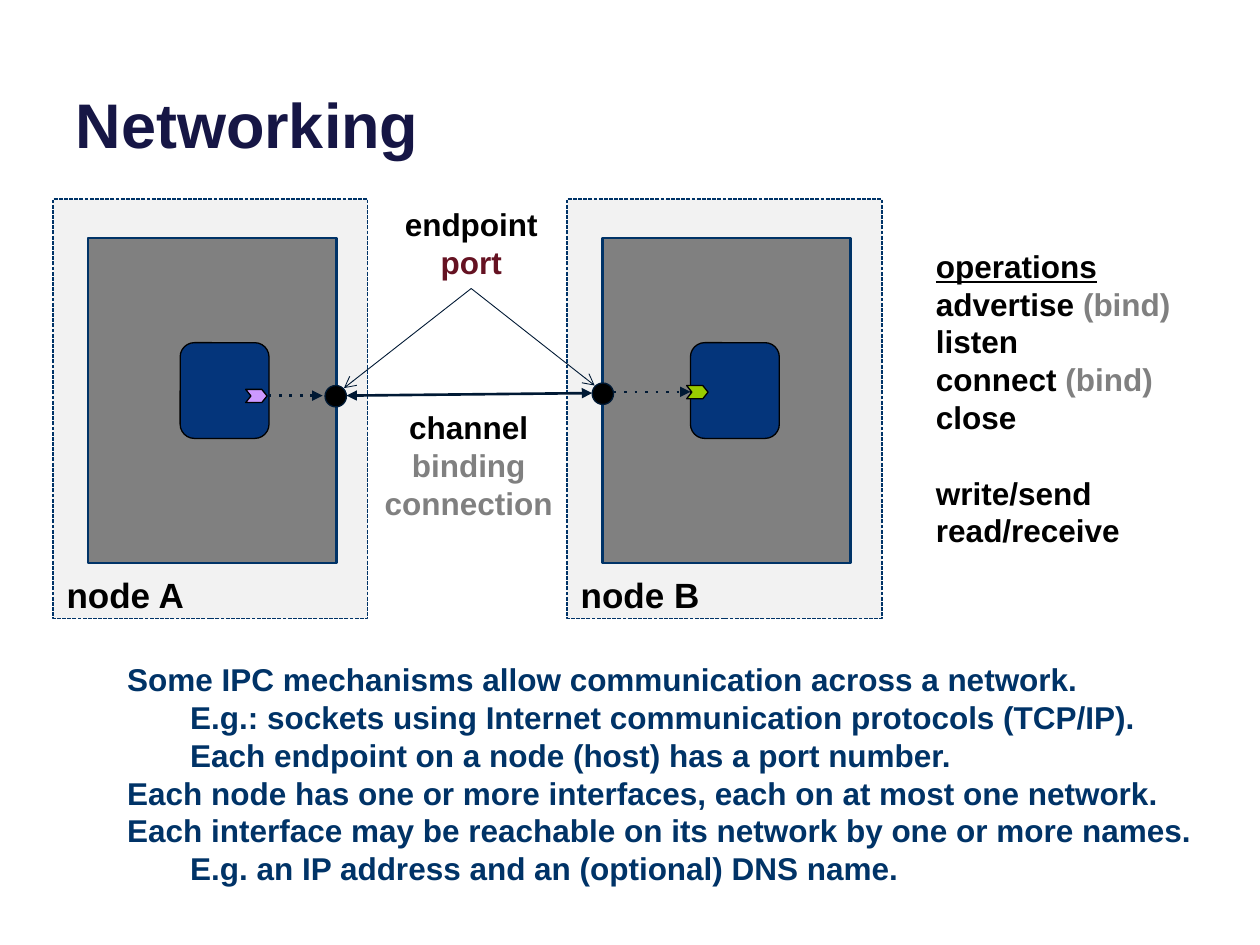
"""Build the Networking slide: two nodes joined by a channel, with notes on IPC."""
from lxml import etree
from pptx import Presentation
from pptx.dml.color import RGBColor
from pptx.enum.dml import MSO_LINE
from pptx.enum.shapes import MSO_CONNECTOR, MSO_SHAPE
from pptx.enum.text import MSO_ANCHOR, MSO_AUTO_SIZE, PP_ALIGN
from pptx.oxml.ns import qn
from pptx.util import Inches, Pt

RECT, ROUNDED = MSO_SHAPE.RECTANGLE, MSO_SHAPE.ROUNDED_RECTANGLE
OVAL, CHEVRON = MSO_SHAPE.OVAL, MSO_SHAPE.CHEVRON
STRAIGHT, DASHED = MSO_CONNECTOR.STRAIGHT, MSO_LINE.SQUARE_DOT
LEFT, CENTER = PP_ALIGN.LEFT, PP_ALIGN.CENTER
TOP, BOTTOM, NO_FIT = MSO_ANCHOR.TOP, MSO_ANCHOR.BOTTOM, MSO_AUTO_SIZE.NONE
BLACK, GRAY, NAVY, INK = "000000", "808080", "003367", "001934"

prs = Presentation()
prs.slide_width, prs.slide_height = Inches(10), Inches(7.5)
COL, ROW = prs.slide_width / 100, prs.slide_height / 75
s = prs.slides.add_slide(prs.slide_layouts[1])


def add_box(kind, x, y, w, h, fill, line, width):
    """Add a filled, outlined shape placed in grid columns and rows."""
    sp = s.shapes.add_shape(kind, int(x * COL), int(y * ROW), int(w * COL), int(h * ROW))
    sp.shadow.inherit = False
    sp.fill.solid()
    sp.fill.fore_color.rgb = RGBColor.from_string(fill)
    sp.line.color.rgb = RGBColor.from_string(line)
    sp.line.width = Pt(width)
    return sp


def write(sp, at, lines, size=18, align=LEFT, anchor=TOP, wrap=True):
    """Place a text holder and fill it with paragraphs of (text, colour) runs."""
    x, y, w, h = at
    sp.left, sp.top, sp.width, sp.height = int(x * COL), int(y * ROW), int(w * COL), int(h * ROW)
    tf = sp.text_frame
    tf.word_wrap, tf.auto_size, tf.vertical_anchor = wrap, NO_FIT, anchor
    for i, runs in enumerate(lines):
        p = tf.paragraphs[0] if i == 0 else tf.add_paragraph()
        p.alignment, p.space_before, p.line_spacing = align, Pt(0), Pt(size * 1.2)
        for text, color in runs:
            r = p.add_run()
            r.text = text
            r.font.name, r.font.size, r.font.bold = "Arial", Pt(size), True
            r.font.color.rgb = RGBColor.from_string(color)
    return tf


write(s.shapes.title, (5, -3.7, 90, 17), [[("Networking", "161645")]], 36, anchor=BOTTOM)

nodes = [("node A", 4.2, 14.3, 19.5, 30.9, "CC99FF", 25.8, 30.6),
         ("node B", 45, 54.8, 54.5, 30.6, "99CC00", 47, 30.4)]
for name, x, process_x, slot_x, slot_y, slot_color, port_x, port_y in nodes:
    add_box(RECT, x, 15.8, 25, 33.3, "F2F2F2", NAVY, 0.75).line.dash_style = DASHED
    add_box(RECT, x + 2.8, 18.9, 19.7, 25.8, GRAY, NAVY, 1.5)
    add_box(ROUNDED, process_x, 27.2, 7.05, 7.6, "04357B", BLACK, 0.75).adjustments[0] = 0.16
    add_box(CHEVRON, slot_x, slot_y, 1.7, 1.05, slot_color, BLACK, 0.75).adjustments[0] = 0.4
    add_box(OVAL, port_x, port_y, 1.7, 1.7, BLACK, INK, 0.75)
    write(s.shapes.add_textbox(0, 0, 0, 0), (x + 0.1, 45, 11.5, 4.4),
          [[(name, BLACK)]], 20, wrap=False)

links = [((27.5, 31.4), (47, 31.2), 1.5, "solid", "triangle", "triangle"),
         ((48.7, 31.1), (54.8, 31.1), 1.5, "dot", "none", "triangle"),
         ((21.3, 31.4), (25.6, 31.4), 1.5, "dot", "none", "triangle"),
         ((37.4, 22.9), (27.3, 30.8), 0.5, "solid", "none", "arrow"),
         ((37.4, 22.9), (47.2, 30.6), 0.5, "solid", "none", "arrow")]
for (x1, y1), (x2, y2), width, dash, head, tail in links:
    link = s.shapes.add_connector(STRAIGHT, int(x1 * COL), int(y1 * ROW),
                                  int(x2 * COL), int(y2 * ROW))
    link.line.color.rgb = RGBColor.from_string(INK)
    link.line.width = Pt(width)
    ln = link.line._get_or_add_ln()
    for tag, key, value in [("a:prstDash", "val", dash), ("a:headEnd", "type", head),
                            ("a:tailEnd", "type", tail)]:
        etree.SubElement(ln, qn(tag)).set(key, value)
    etree.SubElement(link._element.spPr, qn("a:effectLst"))

write(s.shapes.add_textbox(0, 0, 0, 0), (29.5, 15.8, 15.8, 7.1),
      [[("endpoint", BLACK)], [("port", "651222")]], align=CENTER)
write(s.shapes.add_textbox(0, 0, 0, 0), (29.3, 31.9, 15.8, 10.1),
      [[("channel", BLACK)], [("binding", GRAY)], [("connection", GRAY)]], align=CENTER)

bind = ("(bind)", GRAY)
tf = write(s.shapes.add_textbox(0, 0, 0, 0), (73.3, 19.1, 34.2, 31.3),
           [[("operations", BLACK)], [("advertise ", BLACK), bind], [("listen", BLACK)],
            [("connect ", BLACK), bind], [("close", BLACK)],
            [("write/send", BLACK)], [("read/receive", BLACK)]])
tf.paragraphs[0].runs[0].font.underline = True
tf.paragraphs[5].space_before = Pt(21.6)

facts = [(0, "Some IPC mechanisms allow communication across a network."),
         (1, "E.g.: sockets using Internet communication protocols (TCP/IP)."),
         (1, "Each endpoint on a node (host) has a port number."),
         (0, "Each node has one or more interfaces, each on at most one network."),
         (0, "Each interface may be reachable on its network by one or more names."),
         (1, "E.g. an IP address and an (optional) DNS name.")]
tf = write(s.placeholders[1], (9.1, 51.9, 87.6, 22.2), [[(text, NAVY)] for _, text in facts])
for p, (level, _) in zip(tf.paragraphs, facts):
    p.level = level
    pPr = p._p.get_or_add_pPr()
    pPr.set("marL", str(int(level * 5 * COL)))
    pPr.set("indent", "0")
    etree.SubElement(pPr, qn("a:buNone"))

prs.save("out.pptx")
